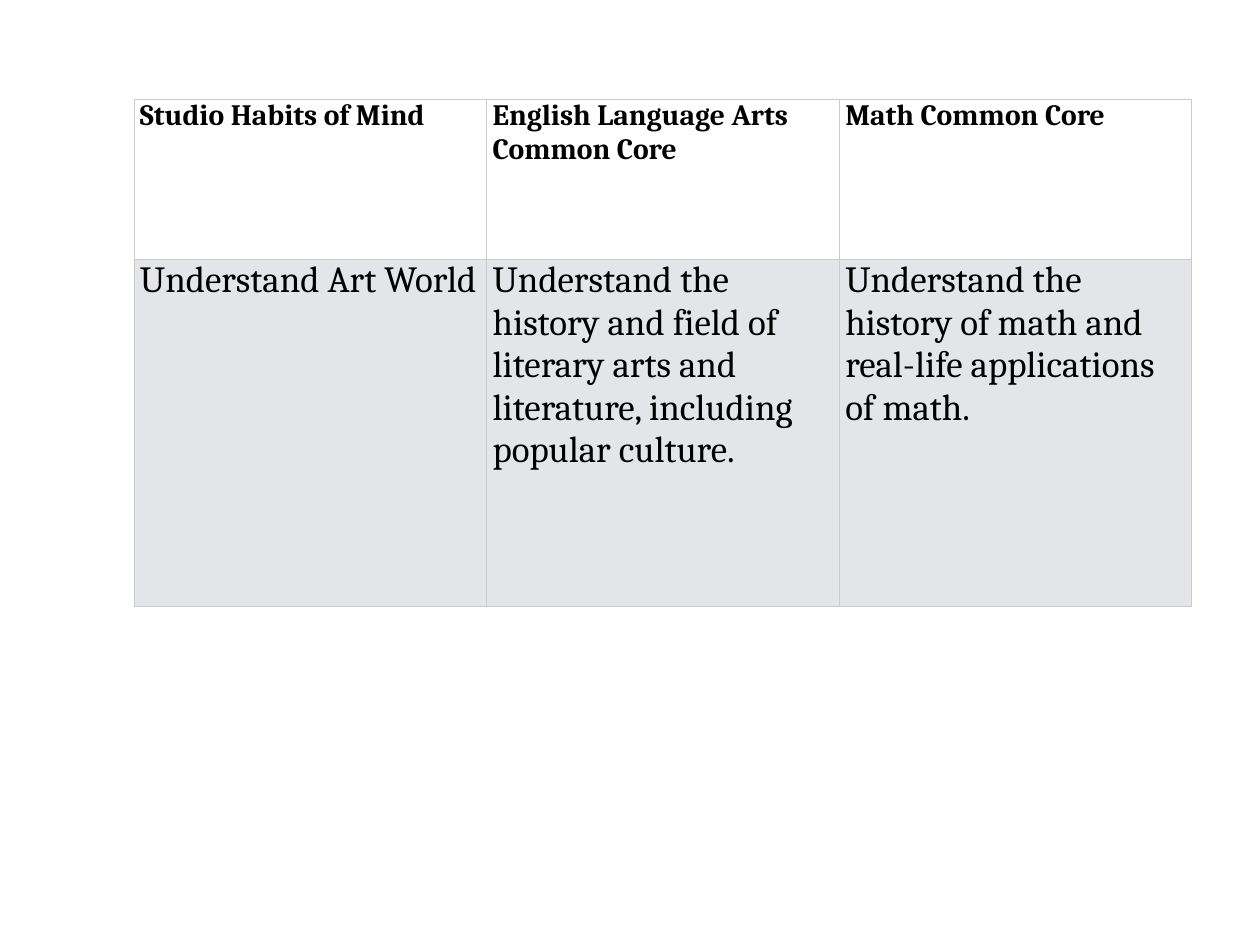
import lxml.etree
import pptx
import pptx.dml.color
import pptx.oxml.ns
import pptx.util

SLIDE_WIDTH, SLIDE_HEIGHT = 14.22, 10.67
TABLE_LEFT, TABLE_TOP = 1.51, 1.12
COLUMN_WIDTH = 3.98
HEADINGS = [
    "Studio Habits of Mind",
    "English Language Arts Common Core",
    "Math Common Core",
]
STANDARDS = [
    "Understand Art World",
    "Understand the history and field of literary arts and literature, "
    "including popular culture.",
    "Understand the history of math and real-life applications of math.",
]
# Each row: texts, height, fill and text format
ROWS = [
    (HEADINGS, 1.81, "FFFFFF", {"size": 24, "bold": True}),
    (STANDARDS, 3.92, "E3E5E8", {"size": 30, "bold": False}),
]


def color(hex_value):
    return pptx.dml.color.RGBColor.from_string(hex_value)


def write_text(frame, text, *, size, bold, font="Cambria", ink="000000"):
    frame.word_wrap = True
    run = frame.paragraphs[0].add_run()
    run.text = text
    run.font.name = font
    run.font.size = pptx.util.Pt(size)
    run.font.bold = bold
    run.font.color.rgb = color(ink)


def set_borders(cell, hex_value, width):
    """Outline a cell; call before filling, since lines precede the fill in the XML."""
    properties = cell._tc.get_or_add_tcPr()
    for side in ("lnL", "lnR", "lnT", "lnB"):
        line = lxml.etree.SubElement(properties, pptx.oxml.ns.qn(f"a:{side}"))
        line.set("w", str(pptx.util.Pt(width)))
        fill = lxml.etree.SubElement(line, pptx.oxml.ns.qn("a:solidFill"))
        lxml.etree.SubElement(fill, pptx.oxml.ns.qn("a:srgbClr")).set("val", hex_value)


def format_cell(cell, text, background, text_format):
    cell.margin_left = cell.margin_right = pptx.util.Inches(0.07)
    cell.margin_top = cell.margin_bottom = 0
    set_borders(cell, "CBCBCB", 0.5)
    cell.fill.solid()
    cell.fill.fore_color.rgb = color(background)
    write_text(cell.text_frame, text, **text_format)


def add_standards_table(slide):
    inches = pptx.util.Inches
    table = slide.shapes.add_table(
        len(ROWS), len(HEADINGS),
        inches(TABLE_LEFT), inches(TABLE_TOP),
        inches(COLUMN_WIDTH * len(HEADINGS)),
        inches(sum(height for _, height, _, _ in ROWS)),
    ).table
    table.horz_banding = False
    for column in table.columns:
        column.width = inches(COLUMN_WIDTH)
    for row, (texts, height, background, text_format) in zip(table.rows, ROWS):
        row.height = inches(height)
        for cell, text in zip(row.cells, texts):
            format_cell(cell, text, background, text_format)


def main():
    presentation = pptx.Presentation()
    presentation.slide_width = pptx.util.Inches(SLIDE_WIDTH)
    presentation.slide_height = pptx.util.Inches(SLIDE_HEIGHT)
    blank_layout = presentation.slide_layouts[6]
    add_standards_table(presentation.slides.add_slide(blank_layout))
    presentation.save("out.pptx")


if __name__ == "__main__":
    main()
